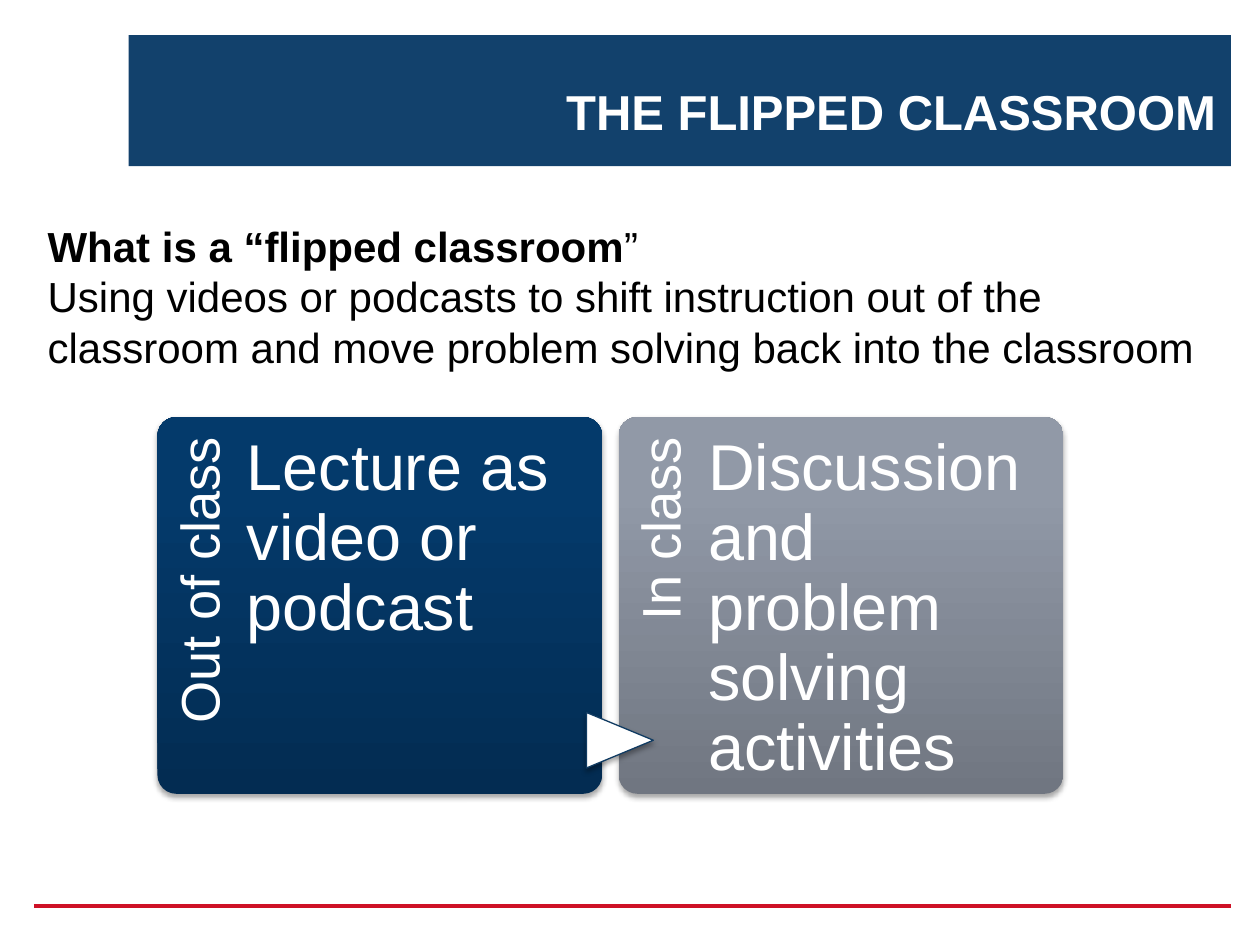
from copy import deepcopy

from lxml import etree
from pptx import Presentation
from pptx import util as u
from pptx.dml.color import RGBColor
from pptx.enum import shapes, text
from pptx.oxml import ns

Inches = u.Inches
COLOURS = {
    "band": "12416C", "rule": "CE1126", "white": "FFFFFF", "black": "000000",
    "arrow_line": "103B62",
}
GRADIENTS = {
    "navy": [(0, "032C52"), (0.8, "043A6B"), (1, "023A6D")],
    "grey": [(0, "707681"), (0.8, "9199A7"), (1, "9199A8")],
}


def rgb(name):
    """Return the named colour."""
    return RGBColor.from_string(COLOURS[name])


def place(shape, box):
    """Move and size a shape to a box of left, top, width, height in inches."""
    shape.left, shape.top, shape.width, shape.height = map(Inches, box)


def write(shape, paragraphs, size, colour="white", bold=False, align=text.PP_ALIGN.LEFT,
          anchor=text.MSO_ANCHOR.TOP, spacing=None, insets=(0.1, 0.05, 0.1, 0.05)):
    """Fill a shape with paragraphs, each a list of (wording, bold) runs or a string."""
    frame = shape.text_frame
    frame.word_wrap = True
    frame.vertical_anchor = anchor
    (frame.margin_left, frame.margin_top,
     frame.margin_right, frame.margin_bottom) = map(Inches, insets)
    for index, runs in enumerate(paragraphs):
        paragraph = frame.add_paragraph() if index else frame.paragraphs[0]
        paragraph.alignment = align
        paragraph.line_spacing = spacing
        for wording, run_bold in [(runs, bold)] if isinstance(runs, str) else runs:
            run = paragraph.add_run()
            run.text = wording
            run.font.name = "Arial"
            run.font.size = u.Pt(size)
            run.font.bold = run_bold
            run.font.color.rgb = rgb(colour)


def add_text(slide, box, paragraphs, rotation=0, **style):
    """Add a text box and write into it."""
    shape = slide.shapes.add_textbox(*map(Inches, box))
    shape.rotation = rotation
    write(shape, paragraphs, **style)
    return shape


def add_plain_shape(slide, kind, box, fill=None):
    """Add a preset shape without line or shadow."""
    shape = slide.shapes.add_shape(kind, *map(Inches, box))
    shape.shadow.inherit = False
    shape.line.fill.background()
    if fill:
        shape.fill.solid()
        shape.fill.fore_color.rgb = rgb(fill)
    return shape


def add_shadow(shape):
    """Give a shape a soft shadow falling straight down."""
    effects = shape._element.spPr.find(ns.qn("a:effectLst"))
    shadow = etree.SubElement(
        effects, ns.qn("a:outerShdw"), blurRad=str(u.Pt(3.1)), dist=str(u.Pt(1.8)),
        dir="5400000", algn="ctr", rotWithShape="0")
    colour = etree.SubElement(shadow, ns.qn("a:srgbClr"), val=COLOURS["black"])
    etree.SubElement(colour, ns.qn("a:alpha"), val="35000")


def fill_gradient(shape, stops):
    """Fill a shape with three colour stops running from bottom to top."""
    shape.fill.gradient()
    shape.fill.gradient_angle = 90
    stop_list = shape._element.spPr.find(".//" + ns.qn("a:gsLst"))
    stop_list.append(deepcopy(stop_list[0]))
    for stop, (position, colour) in zip(shape.fill.gradient_stops, stops):
        stop.position = position
        stop.color.rgb = RGBColor.from_string(colour)


def add_header(slide, box, wording):
    """Draw the title band and set the title inside it."""
    left, top, width, height = box
    band = add_plain_shape(slide, shapes.MSO_SHAPE.RECTANGLE, box, "band")
    title = slide.shapes.title
    band._element.addnext(title._element)
    place(title, (left + 1.01, top + 0.19, width - 1.03, height - 0.35))
    write(title, [wording], size=28, bold=True, align=text.PP_ALIGN.RIGHT,
          anchor=text.MSO_ANCHOR.BOTTOM, spacing=u.Pt(25))


def add_footer_rule(slide, left, top, width):
    """Draw the rule at the foot of the slide."""
    rule = slide.shapes.add_connector(
        shapes.MSO_CONNECTOR.STRAIGHT, Inches(left), Inches(top),
        Inches(left + width), Inches(top))
    rule.line.color.rgb = rgb("rule")
    rule.line.width = u.Pt(2.25)
    etree.SubElement(rule._element.spPr, ns.qn("a:effectLst"))


def add_panel(slide, box, label, body, gradient):
    """Draw a rounded panel with an upright label and a body text."""
    left, top, width, height = box
    panel = add_plain_shape(slide, shapes.MSO_SHAPE.ROUNDED_RECTANGLE, box)
    panel.adjustments[0] = 0.05
    fill_gradient(panel, GRADIENTS[gradient])
    add_shadow(panel)
    add_text(slide, (left - 0.87, top + 0.88, 2.45, 0.71), [label], rotation=270, size=31,
             align=text.PP_ALIGN.RIGHT, spacing=0.9, insets=(0, 0.12, 0.15, 0))
    add_text(slide, (left + 0.71, top, width - 0.9, height), [body], size=37,
             spacing=0.9, insets=(0, 0.14, 0, 0))


def add_process(slide, box, panels, gap):
    """Draw equal panels side by side, with an arrow across each gap."""
    left, top, width, height = box
    panel_width = (width - gap * (len(panels) - 1)) / len(panels)
    for index, panel in enumerate(panels):
        panel_left = left + index * (panel_width + gap)
        add_panel(slide, (panel_left, top, panel_width, height), *panel)
        if index:
            arrow = add_plain_shape(slide, shapes.MSO_SHAPE.FLOWCHART_EXTRACT,
                                    (panel_left - 0.21, top + 2.3, 0.44, 0.53), "white")
            arrow.rotation = 90
            arrow.line.color.rgb = rgb("arrow_line")
            arrow.line.width = u.Pt(0.75)
            add_shadow(arrow)


def main():
    """Build and save the slide."""
    presentation = Presentation()
    presentation.slide_width, presentation.slide_height = Inches(10), Inches(7.5)
    slide = presentation.slides.add_slide(presentation.slide_layouts[5])
    add_header(slide, (1.02, 0.28, 8.75, 1.04), "THE FLIPPED CLASSROOM")
    add_footer_rule(slide, 0.27, 7.19, 9.5)
    add_process(slide, (1.25, 3.31, 7.19, 2.99), [
        ("Out of class", "Lecture as video or podcast", "navy"),
        ("In class", "Discussion and problem solving activities", "grey"),
    ], gap=0.13)
    add_text(slide, (0.28, 1.7, 9.53, 1.31), [
        [("What is a “flipped classroom", True), ("”", False)],
        "Using videos or podcasts to shift instruction out of the classroom "
        "and move problem solving back into the classroom",
    ], size=24, colour="black")
    presentation.save("out.pptx")


if __name__ == "__main__":
    main()
